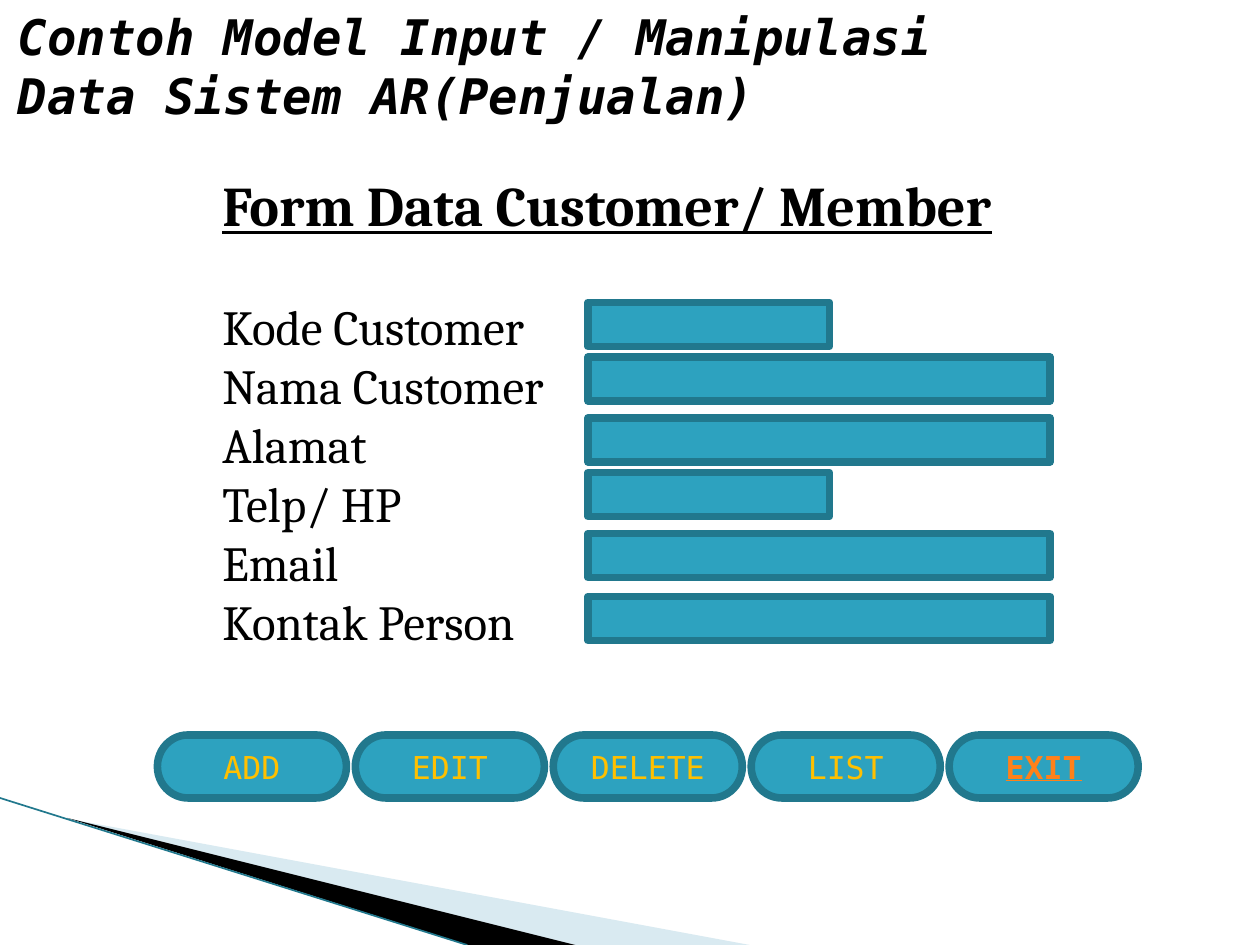
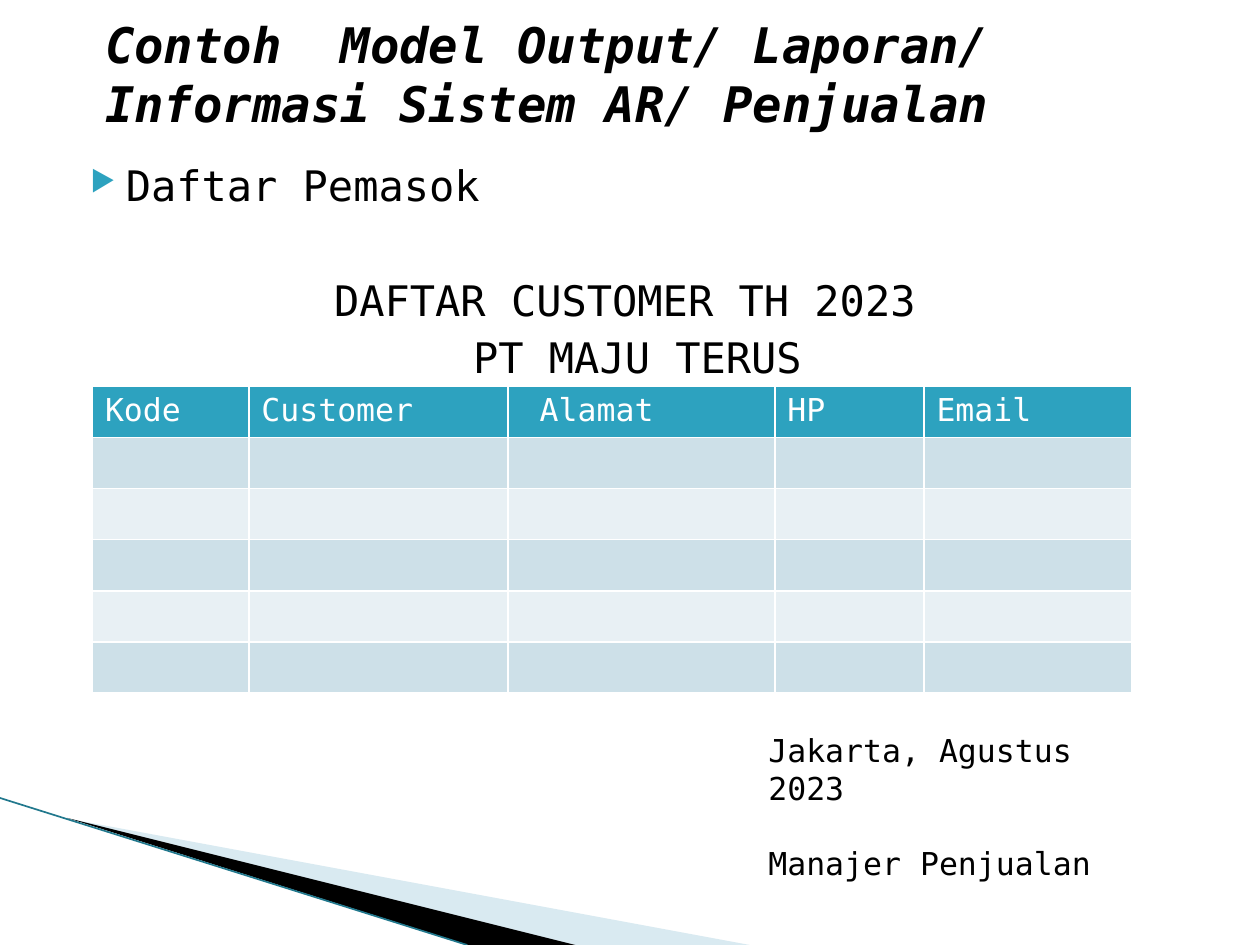
import pptx
import pptx.dml.color
import pptx.enum.shapes
import pptx.enum.text
import pptx.oxml
import pptx.oxml.ns
import pptx.util

COLOURS = {
    "teal": "2DA2BF", "dark_teal": "21788D", "pale_wedge": "A0CBDC",
    "black": "000000", "white": "FFFFFF", "gold": "FFC000", "orange": "FF8119",
    "row_odd": "CDE0E8", "row_even": "E8F0F4",
}
RGB = {name: pptx.dml.color.RGBColor.from_string(code) for name, code in COLOURS.items()}
MONO, SERIF = "DejaVu Sans Mono", "Cambria"
TITLE_FONT = {"name": MONO, "size": pptx.util.Pt(28), "bold": True, "italic": True}
SHAPES = pptx.enum.shapes.MSO_SHAPE
ALIGN = pptx.enum.text.PP_ALIGN
COLUMNS, ROWS = 120, 90

deck = pptx.Presentation()
deck.slide_width, deck.slide_height = pptx.util.Inches(10), pptx.util.Inches(7.5)
UNIT = deck.slide_width / COLUMNS


def grid(*units):
    """Turn grid columns and rows into slide lengths."""
    return [round(unit * UNIT) for unit in units]


def write(frame, lines, colour, font, align=ALIGN.LEFT):
    """Fill a text frame, one paragraph a line, and return the paragraphs."""
    frame.word_wrap = True
    for number, line in enumerate(lines):
        paragraph = frame.paragraphs[0] if number == 0 else frame.add_paragraph()
        paragraph.alignment = align
        run = paragraph.add_run()
        run.text = line
        run.font.color.rgb = RGB[colour]
        for attribute, value in font.items():
            setattr(run.font, attribute, value)
    return frame.paragraphs


# Both slides: corner wedges and title
TITLES = [
    ("Contoh Model Input / Manipulasi Data Sistem AR(Penjualan)", (0.5, 0, 96.7, 12.4)),
    ("Contoh  Model Output/ Laporan/ Informasi Sistem AR/ Penjualan", (8.8, 0.8, 103, 12.5)),
]
WEDGES = [
    ("pale_wedge", [(6.6, 78), (71.4, ROWS), (54.7, ROWS)]),
    ("black", [(6.4, 77.9), (54.8, ROWS), (44.6, ROWS)]),
]
slides = []
for title_text, title_place in TITLES:
    slide = deck.slides.add_slide(deck.slide_layouts[5])
    slides.append(slide)
    for colour, corners in WEDGES:
        start, *others = [grid(*corner) for corner in corners]
        outline = slide.shapes.build_freeform(*start)
        outline.add_line_segments(others)
        wedge = outline.convert_to_shape()
        wedge.shadow.inherit = False
        wedge.fill.solid()
        wedge.fill.fore_color.rgb = RGB[colour]
        wedge.line.fill.background()
        if colour == "pale_wedge":
            tint = wedge.fill._xPr.find(".//" + pptx.oxml.ns.qn("a:srgbClr"))
            tint.append(pptx.oxml.parse_xml(
                f'<a:alpha {pptx.oxml.ns.nsdecls("a")} val="40000"/>'))
    edge = slide.shapes.add_connector(
        pptx.enum.shapes.MSO_CONNECTOR.STRAIGHT, *grid(0, 76, 44.5, ROWS))
    edge.line.color.rgb = RGB["dark_teal"]
    edge.line.width = pptx.util.Pt(0.95)
    edge._element.spPr.append(pptx.oxml.parse_xml(
        f'<a:effectLst {pptx.oxml.ns.nsdecls("a")}/>'))

    title = slide.shapes.title
    title.left, title.top, title.width, title.height = grid(*title_place)
    title.text_frame.auto_size = pptx.enum.text.MSO_AUTO_SIZE.NONE
    title.text_frame.vertical_anchor = pptx.enum.text.MSO_ANCHOR.TOP
    write(title.text_frame, [title_text], "black", TITLE_FONT)

input_slide, report_slide = slides

# Customer form
SHORT, LONG = 23, 44
FIELDS = [
    ("Kode Customer", 28.8, SHORT), ("Nama Customer", 34, LONG),
    ("Alamat", 39.8, LONG), ("Telp/ HP", 45, SHORT),
    ("Email", 50.8, LONG), ("Kontak Person", 56.8, LONG),
]
form = input_slide.shapes.add_textbox(*grid(20, 15.7, 84, 47.3))
heading, first_label, *_ = write(
    form.text_frame, ["Form Data Customer/ Member"] + [label for label, _, _ in FIELDS],
    "black", {"name": SERIF, "size": pptx.util.Pt(28)})
first_label.space_before = pptx.util.Pt(33.5)
for attribute, value in {"size": pptx.util.Pt(32), "bold": True, "underline": True}.items():
    setattr(heading.runs[0].font, attribute, value)

controls = [(SHAPES.RECTANGLE, (56, top, width, 4.2), "") for _, top, width in FIELDS]
controls += [(SHAPES.FLOWCHART_TERMINATOR, (15 + 18.85 * number, 70, 18, 6), action)
             for number, action in enumerate(["ADD", "EDIT", "DELETE", "LIST", "EXIT"])]
for kind, place, action in controls:
    control = input_slide.shapes.add_shape(kind, *grid(*place))
    control.shadow.inherit = False
    control.fill.solid()
    control.fill.fore_color.rgb = RGB["teal"]
    control.line.color.rgb = RGB["dark_teal"]
    control.line.width = pptx.util.Pt(4.33)
    if action:
        leaving = action == "EXIT"
        write(control.text_frame, [action], "orange" if leaving else "gold",
              {"name": MONO, "size": pptx.util.Pt(18), "bold": leaving, "underline": leaving},
              ALIGN.CENTER)

# Customer report
report = report_slide.shapes.add_textbox(*grid(6, 14.6, 108, 22))
topic, *report_heads = write(
    report.text_frame, ["Daftar Pemasok", "DAFTAR CUSTOMER TH 2023 ", "PT MAJU TERUS"],
    "black", {"name": MONO, "size": pptx.util.Pt(24)}, ALIGN.CENTER)
topic.alignment = ALIGN.LEFT
topic_format = topic._p.get_or_add_pPr()
topic_format.set("marL", str(pptx.util.Inches(0.4)))
topic_format.set("indent", str(pptx.util.Inches(-0.28)))
for bullet_part in (f'buClr {{}}><a:srgbClr val="{COLOURS["teal"]}"/></a:buClr>',
                    'buSzPct {} val="68000"/>', 'buChar {} char="▶"/>'):
    topic_format.append(pptx.oxml.parse_xml(
        "<a:" + bullet_part.format(pptx.oxml.ns.nsdecls("a"))))
for report_head, gap in zip(report_heads, (36.8, 4)):
    report_head._p.get_or_add_pPr().set("marL", str(pptx.util.Inches(0.12)))
    report_head.space_before = pptx.util.Pt(gap)

CUSTOMER_COLUMNS = {"Kode": 14.9, "Customer": 24.7, " Alamat": 25.4, "HP": 14.2, "Email": 19.8}
ROW_COUNT, ROW_HEIGHT = 6, 4.87
customers = report_slide.shapes.add_table(
    ROW_COUNT, len(CUSTOMER_COLUMNS),
    *grid(8.8, 36.8, sum(CUSTOMER_COLUMNS.values()), ROW_COUNT * ROW_HEIGHT)).table
for column, (label, width) in enumerate(CUSTOMER_COLUMNS.items()):
    customers.columns[column].width = grid(width)[0]
    write(customers.cell(0, column).text_frame, [label], "white",
          {"name": MONO, "size": pptx.util.Pt(18), "bold": False})
for number, row in enumerate(customers.rows):
    row_colour = "teal" if number == 0 else "row_odd" if number % 2 else "row_even"
    for cell in row.cells:
        for side in "LRTB":
            cell._tc.get_or_add_tcPr().append(pptx.oxml.parse_xml(
                f'<a:ln{side} {pptx.oxml.ns.nsdecls("a")} w="12700"><a:solidFill>'
                f'<a:srgbClr val="{COLOURS["white"]}"/></a:solidFill></a:ln{side}>'))
        cell.fill.solid()
        cell.fill.fore_color.rgb = RGB[row_colour]

signature = report_slide.shapes.add_textbox(*grid(72, 69, 35, 12.1))
_, signer = write(signature.text_frame, ["Jakarta, Agustus 2023", "Manajer Penjualan"],
                  "black", {"name": MONO, "size": pptx.util.Pt(18)})
signer.space_before = pptx.util.Pt(21.6)

deck.save("out.pptx")
